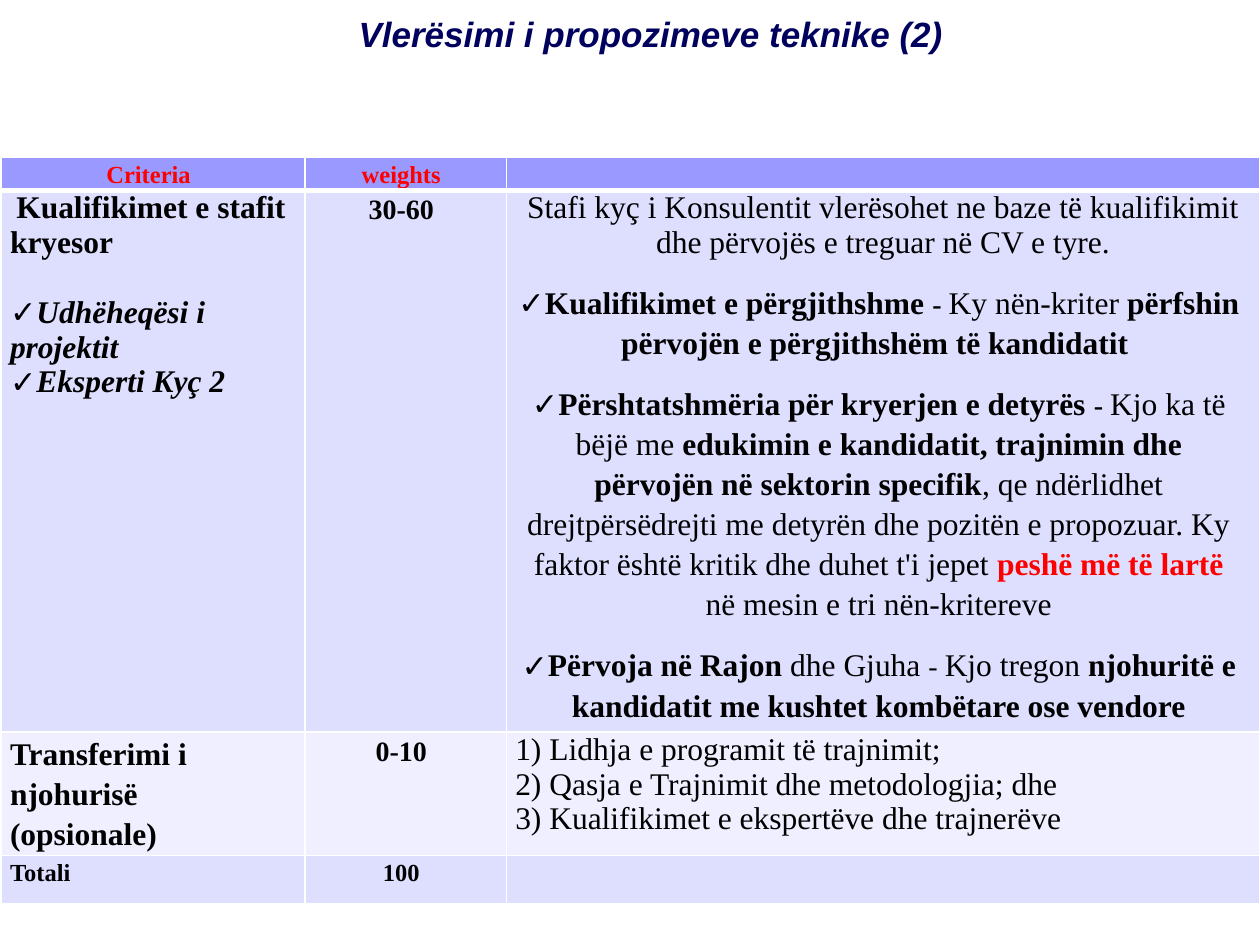
import pptx
import pptx.dml.color
import pptx.enum.text
import pptx.oxml
import pptx.util
from lxml import etree

Inches, Pt = pptx.util.Inches, pptx.util.Pt
ALIGN = pptx.enum.text.PP_ALIGN
NAMESPACE = "http://schemas.openxmlformats.org/drawingml/2006/main"
WIDTH, HEIGHT = 10, 7.5
RED, BLACK, NAVY, WHITE = "FF0000", "000000", "00005E", "FFFFFF"


def color(hex_string):
    return pptx.dml.color.RGBColor.from_string(hex_string)


def write(paragraph, *runs, align=ALIGN.LEFT, spacing=1.0, before=0, bullet=None,
          indent=0, right=0, **base):
    """Fill a paragraph with runs, each a (text, format changes) pair over the base format."""
    paragraph.alignment = align
    paragraph.line_spacing = spacing
    paragraph.space_before = Pt(before)
    properties = paragraph._p.get_or_add_pPr()
    properties.set("marL", "0")
    properties.set("marR", str(Inches(right)))
    properties.set("indent", str(Inches(indent)))
    if bullet:
        etree.SubElement(properties, f"{{{NAMESPACE}}}buFont", typeface="Arial")
        etree.SubElement(properties, f"{{{NAMESPACE}}}buChar", char=bullet)
    for text, changes in runs:
        style = {"font": "Times New Roman", "size": 18, "fill": BLACK,
                 "bold": False, "italic": False, **base, **changes}
        run = paragraph.add_run()
        run.text = text
        run.font.name = style["font"]
        run.font.size = Pt(style["size"])
        run.font.bold = style["bold"]
        run.font.italic = style["italic"]
        run.font.color.rgb = color(style["fill"])


presentation = pptx.Presentation()
presentation.slide_width = Inches(WIDTH)
presentation.slide_height = Inches(HEIGHT)
slide = presentation.slides.add_slide(presentation.slide_layouts[6])

# Each paragraph is a list of runs and its format
bold = {"bold": True}
dash = ("- ", {"size": 16})
bold_dash = ("- ", {"size": 16, "bold": True})
loose = {"spacing": 1.15, "right": 0.07}
centered = {**loose, "align": ALIGN.CENTER}
header = {**centered, "size": 14, "fill": RED, "bold": True}
weight = {**centered, "size": 16, "bold": True}
total = {**loose, "size": 14, "bold": True}
check = {"bullet": "✓", "bold": True, "italic": True}
factor = {**centered, "before": 12, "bullet": "✓"}

rows = [
    [
        [([("Criteria", {})], header)],
        [([("weights", {})], header)],
        [],
    ],
    [
        [([("Kualifikimet e stafit kryesor", bold)], {"indent": 0.05}),
         ([("Udhëheqësi i projektit", {})], {**check, "before": 20}),
         ([("Eksperti Kyç 2", {})], check)],
        [([("30-60", {})], weight)],
        [([("Stafi kyç i Konsulentit vlerësohet ne baze të kualifikimit "
            "dhe përvojës e treguar në CV e tyre.", {})], {"align": ALIGN.CENTER}),
         ([("Kualifikimet e përgjithshme ", bold), bold_dash,
           ("Ky nën-kriter ", {}),
           ("përfshin përvojën e përgjithshëm të kandidatit ", bold)], factor),
         ([("Përshtatshmëria për kryerjen e detyrës ", bold), bold_dash,
           ("Kjo ka të bëjë me ", {}),
           ("edukimin e kandidatit, trajnimin dhe përvojën në sektorin specifik", bold),
           (", qe ndërlidhet drejtpërsëdrejti me detyrën dhe pozitën e propozuar. "
            "Ky faktor është kritik dhe duhet t'i jepet ", {}),
           ("peshë më të lartë ", {"bold": True, "fill": RED}),
           ("në mesin e tri nën-kritereve", {})], factor),
         ([("Përvoja në Rajon", bold), (" dhe Gjuha ", {}), dash,
           ("Kjo tregon ", {}),
           ("njohuritë e kandidatit me kushtet kombëtare ose vendore", bold)], factor)],
    ],
    [
        [([("Transferimi i njohurisë (opsionale)", bold)], loose)],
        [([("0-10", {})], weight)],
        [([(line, {})], {}) for line in (
            "1) Lidhja e programit të trajnimit;",
            "2) Qasja e Trajnimit dhe metodologjia; dhe",
            "3) Kualifikimet e ekspertëve dhe trajnerëve")],
    ],
    [
        [([("Totali", {})], total)],
        [([("100", {})], {**total, **centered})],
        [],
    ],
]

column_widths = [2.41, 1.6, 5.98]
row_heights = [0.26, 4.3, 0.98, 0.38]
row_fills = ["9999FF", "DEDEFF", "EFEFFF", "DEDEFF"]

table_width = sum(column_widths)
table = slide.shapes.add_table(
    len(rows), len(column_widths), Inches(WIDTH - table_width), Inches(HEIGHT / 6),
    Inches(table_width), Inches(sum(row_heights))).table
for column, width in zip(table.columns, column_widths):
    column.width = Inches(width)

for row_index, row in enumerate(rows):
    table.rows[row_index].height = Inches(row_heights[row_index])
    for column_index, paragraphs in enumerate(row):
        cell = table.cell(row_index, column_index)
        cell.margin_left = cell.margin_right = Inches(0.07)
        cell.margin_top = cell.margin_bottom = 0
        # The line under the header row is thicker than the rest
        widths = {"lnL": 1, "lnR": 1, "lnT": 3 if row_index == 1 else 1,
                  "lnB": 3 if row_index == 0 else 1}
        for side, width in widths.items():
            cell._tc.get_or_add_tcPr().append(pptx.oxml.parse_xml(
                f'<a:{side} xmlns:a="{NAMESPACE}" w="{Pt(width)}"><a:solidFill>'
                f'<a:srgbClr val="{WHITE}"/></a:solidFill></a:{side}>'))
        cell.fill.solid()
        cell.fill.fore_color.rgb = color(row_fills[row_index])

        frame = cell.text_frame
        for index, (runs, style) in enumerate(paragraphs):
            paragraph = frame.add_paragraph() if index else frame.paragraphs[0]
            write(paragraph, *runs, **style)
        if not paragraphs:  # a small empty line keeps the row at its height
            etree.SubElement(frame.paragraphs[0]._p, f"{{{NAMESPACE}}}endParaRPr", sz="1400")

title = slide.shapes.add_textbox(0, 0, Inches(WIDTH), Inches(0.82)).text_frame
title.word_wrap = True
title.margin_left, title.margin_top = Inches(0.43), Inches(0.1)
write(title.paragraphs[0], ("Vlerësimi i propozimeve teknike (2)", {}),
      align=ALIGN.CENTER, font="Arial", size=20, fill=NAVY, bold=True, italic=True)

presentation.save("out.pptx")
